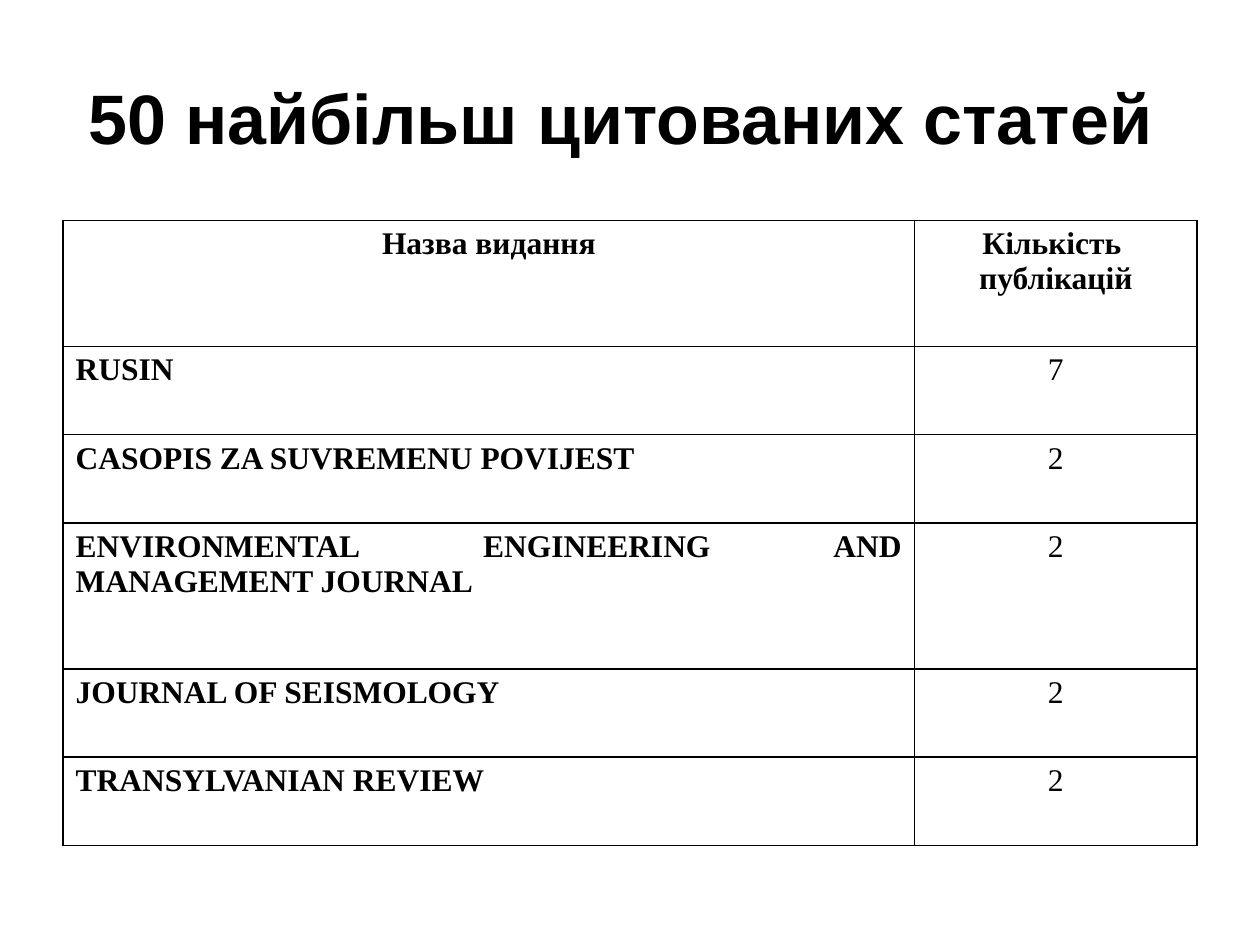
from dataclasses import dataclass

from lxml.etree import SubElement
from pptx import Presentation
from pptx.dml.color import RGBColor
from pptx.enum.text import MSO_ANCHOR, PP_ALIGN as Align
from pptx.oxml.ns import qn
from pptx.util import Inches, Pt


@dataclass(frozen=True)
class Theme:
    """Colours, fonts and sizes of the slide."""
    ink: str = "000000"
    paper: str = "FFFFFF"
    title_font: str = "Arial"
    table_font: str = "Times New Roman"
    title_size: int = 40
    table_size: int = 18
    border: int = 1


THEME = Theme()
COL_WIDTHS = (6.76, 2.24)
ROW_HEIGHTS = (1, 0.7, 0.7, 1.16, 0.7, 0.7)
HANGING = 0.38
HEADER = (["Назва видання"], ["Кількість\u00a0", "публікацій"])
JOURNALS = (
    ("RUSIN", 7, HANGING),
    ("CASOPIS ZA SUVREMENU POVIJEST ", 2, HANGING),
    ("ENVIRONMENTAL ENGINEERING AND MANAGEMENT JOURNAL", 2, 0),
    ("JOURNAL OF SEISMOLOGY", 2, HANGING),
    ("TRANSYLVANIAN REVIEW", 2, HANGING),
)


def add_run(p, text, font, size, bold):
    """Add one styled run to a paragraph."""
    r = p.add_run()
    r.text = text
    r.font.name = font
    r.font.size = Pt(size)
    r.font.bold = bold
    r.font.color.rgb = RGBColor.from_string(THEME.ink)


def add_title(s, text):
    """Add the centred slide title."""
    tf = s.shapes.add_textbox(Inches(0.5), Inches(0.3), Inches(9), Inches(1.25)).text_frame
    tf.word_wrap = True
    tf.vertical_anchor = MSO_ANCHOR.MIDDLE
    p = tf.paragraphs[0]
    p.alignment = Align.CENTER
    add_run(p, text, THEME.title_font, THEME.title_size, True)


def set_borders(cell):
    """Draw a thin line on all four sides of a cell."""
    tc_pr = cell._tc.get_or_add_tcPr()
    for i, side in enumerate(("lnL", "lnR", "lnT", "lnB")):
        ln = SubElement(tc_pr, qn(f"a:{side}"), w=str(Pt(THEME.border)))
        SubElement(SubElement(ln, qn("a:solidFill")), qn("a:srgbClr"), val=THEME.ink)
        tc_pr.insert(i, ln)


def fill_cell(cell, lines, align, bold, hanging=HANGING):
    """Write the lines of a cell as paragraphs with a hanging indent."""
    cell.fill.background()
    set_borders(cell)
    tf = cell.text_frame
    for i, line in enumerate(lines):
        p = tf.add_paragraph() if i else tf.paragraphs[0]
        p.alignment = align
        p_pr = p._p.get_or_add_pPr()
        p_pr.set("marL", str(Inches(hanging)))
        p_pr.set("indent", str(Inches(-hanging)))
        add_run(p, line, THEME.table_font, THEME.table_size, bold)


def add_journal_table(s):
    """Add the table of journals and their publication counts."""
    table = s.shapes.add_table(len(ROW_HEIGHTS), len(COL_WIDTHS), Inches(0.5), Inches(1.75),
                               Inches(sum(COL_WIDTHS)), Inches(sum(ROW_HEIGHTS))).table
    table.horz_banding = False
    table.first_row = False
    for col, width in zip(table.columns, COL_WIDTHS):
        col.width = Inches(width)
    for row, height in zip(table.rows, ROW_HEIGHTS):
        row.height = Inches(height)
    for i, lines in enumerate(HEADER):
        fill_cell(table.cell(0, i), lines, Align.CENTER, True)
    for i, (name, count, hanging) in enumerate(JOURNALS, 1):
        fill_cell(table.cell(i, 0), [name], Align.JUSTIFY, True, hanging)
        fill_cell(table.cell(i, 1), [str(count)], Align.CENTER, False)


def main():
    """Build and save the slide."""
    prs = Presentation()
    prs.slide_width, prs.slide_height = Inches(10), Inches(7.5)
    s = prs.slides.add_slide(prs.slide_layouts[6])
    s.background.fill.solid()
    s.background.fill.fore_color.rgb = RGBColor.from_string(THEME.paper)
    add_title(s, "50 найбільш цитованих статей ")
    add_journal_table(s)
    prs.save("out.pptx")


if __name__ == "__main__":
    main()
